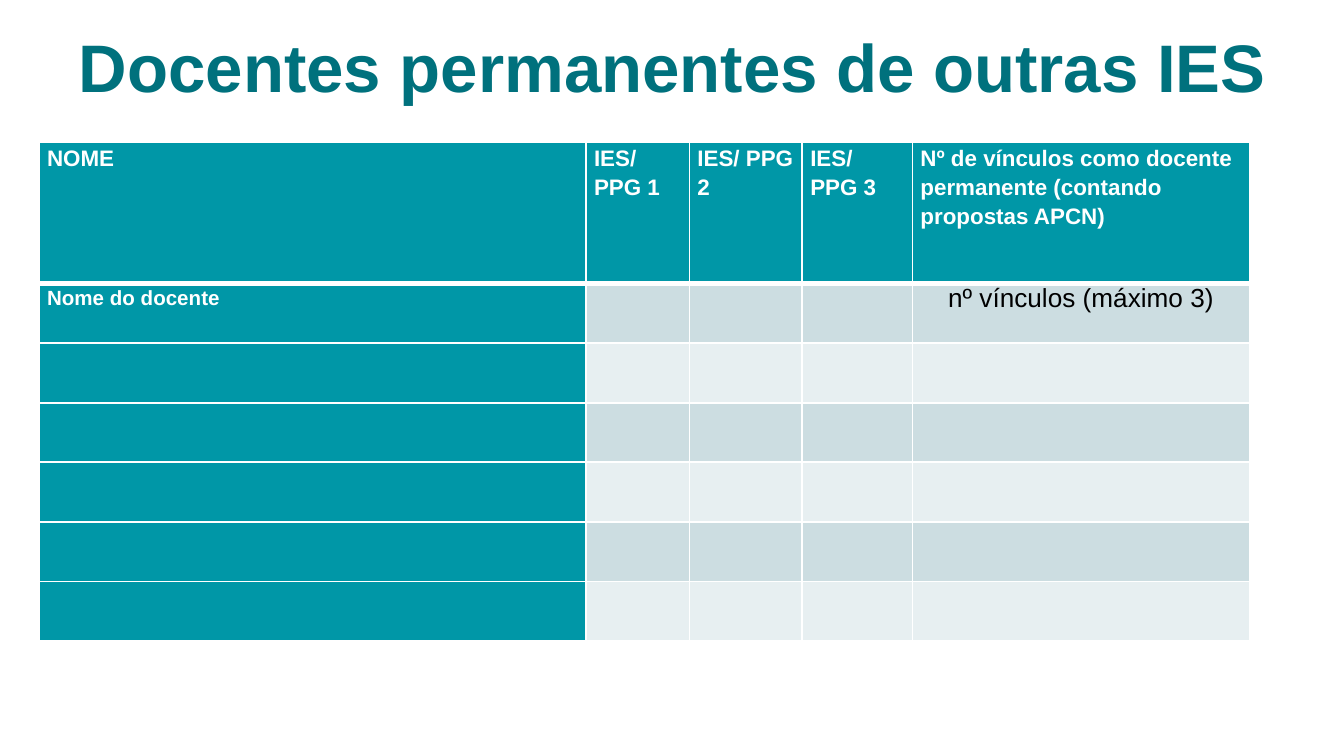
import pptx
import pptx.dml.color
import pptx.enum.text
import pptx.oxml.ns
import pptx.util
from lxml import etree

Inches, Pt = pptx.util.Inches, pptx.util.Pt
ALIGN = pptx.enum.text.PP_ALIGN

# Content
TITLE = "Docentes permanentes de outras IES"
HEADINGS = [
    "NOME", "IES/ PPG 1", "IES/ PPG 2", "IES/ PPG 3",
    "Nº de vínculos como docente permanente (contando propostas APCN)",
]
EXAMPLE = ["Nome do docente", "", "", "", "nº vínculos (máximo 3)"]
EMPTY_ROWS = 5
ROWS = [HEADINGS, EXAMPLE] + [[""] * len(HEADINGS)] * EMPTY_ROWS

# Layout in inches
COLUMN_WIDTHS = [4.07, 0.77, 0.84, 0.82, 2.51]
TABLE_HEIGHT, HEADING_HEIGHT = 3.71, 1.05
BODY_ROWS = len(ROWS) - 1
ROW_HEIGHTS = [HEADING_HEIGHT] + [(TABLE_HEIGHT - HEADING_HEIGHT) / BODY_ROWS] * BODY_ROWS

THEME = {
    "font": "Arial",
    "title": "00717D", "teal": "0097A7", "bands": ("CCDDE1", "E7EFF1"),
    "light": "FFFFFF", "dark": "000000",
    "title_size": 36, "heading_size": 12, "name_size": 11, "value_size": 14,
    "rule": 1, "heading_rule": 3,
}


def rgb(name):
    return pptx.dml.color.RGBColor.from_string(name)


def write(paragraph, text, size, color, bold):
    run = paragraph.add_run()
    run.text = text
    run.font.name = THEME["font"]
    run.font.size = Pt(size)
    run.font.bold = bold
    run.font.color.rgb = rgb(color)


def add_borders(cell, row):
    properties = cell._tc.get_or_add_tcPr()
    thick_side = {0: "B", 1: "T"}.get(row)
    for side in "LRTB":
        width = THEME["heading_rule" if side == thick_side else "rule"]
        line = etree.SubElement(properties, pptx.oxml.ns.qn(f"a:ln{side}"), w=str(Pt(width)))
        fill = etree.SubElement(line, pptx.oxml.ns.qn("a:solidFill"))
        etree.SubElement(fill, pptx.oxml.ns.qn("a:srgbClr"), val=THEME["light"])


def style_cell(cell, row, column, text):
    add_borders(cell, row)
    on_teal = row == 0 or column == 0
    cell.fill.solid()
    cell.fill.fore_color.rgb = rgb(THEME["teal"] if on_teal else THEME["bands"][(row - 1) % 2])
    cell.margin_left = cell.margin_right = Inches(0.06)
    cell.margin_top = cell.margin_bottom = 0
    if not text:
        return
    paragraph = cell.text_frame.paragraphs[0]
    if on_teal:
        paragraph.line_spacing = 1.15
        size = THEME["heading_size" if row == 0 else "name_size"]
        write(paragraph, text, size, THEME["light"], True)
    else:
        paragraph.alignment = ALIGN.CENTER
        write(paragraph, text, THEME["value_size"], THEME["dark"], False)


# Widescreen slide, 16:9
deck = pptx.Presentation()
deck.slide_width = Inches(10)
deck.slide_height = Inches(10 * 9 / 16)
slide = deck.slides.add_slide(deck.slide_layouts[6])

# Title
heading = slide.shapes.add_textbox(Inches(0.29), Inches(0.31), Inches(9.43), Inches(0.58)).text_frame
heading.word_wrap = True
heading.vertical_anchor = pptx.enum.text.MSO_ANCHOR.BOTTOM
heading.margin_left = heading.margin_right = Inches(0.1)
heading.margin_top = heading.margin_bottom = Inches(0.1)
heading.paragraphs[0].alignment = ALIGN.CENTER
write(heading.paragraphs[0], TITLE, THEME["title_size"], THEME["title"], True)

# Table of lecturers
lecturers = slide.shapes.add_table(
    len(ROWS), len(HEADINGS), Inches(0.29), Inches(1.06),
    Inches(sum(COLUMN_WIDTHS)), Inches(TABLE_HEIGHT),
).table
lecturers.first_col = True
for column, width in zip(lecturers.columns, COLUMN_WIDTHS):
    column.width = Inches(width)
for row, height in zip(lecturers.rows, ROW_HEIGHTS):
    row.height = Inches(height)
for r, texts in enumerate(ROWS):
    for c, text in enumerate(texts):
        style_cell(lecturers.cell(r, c), r, c, text)

deck.save("out.pptx")
